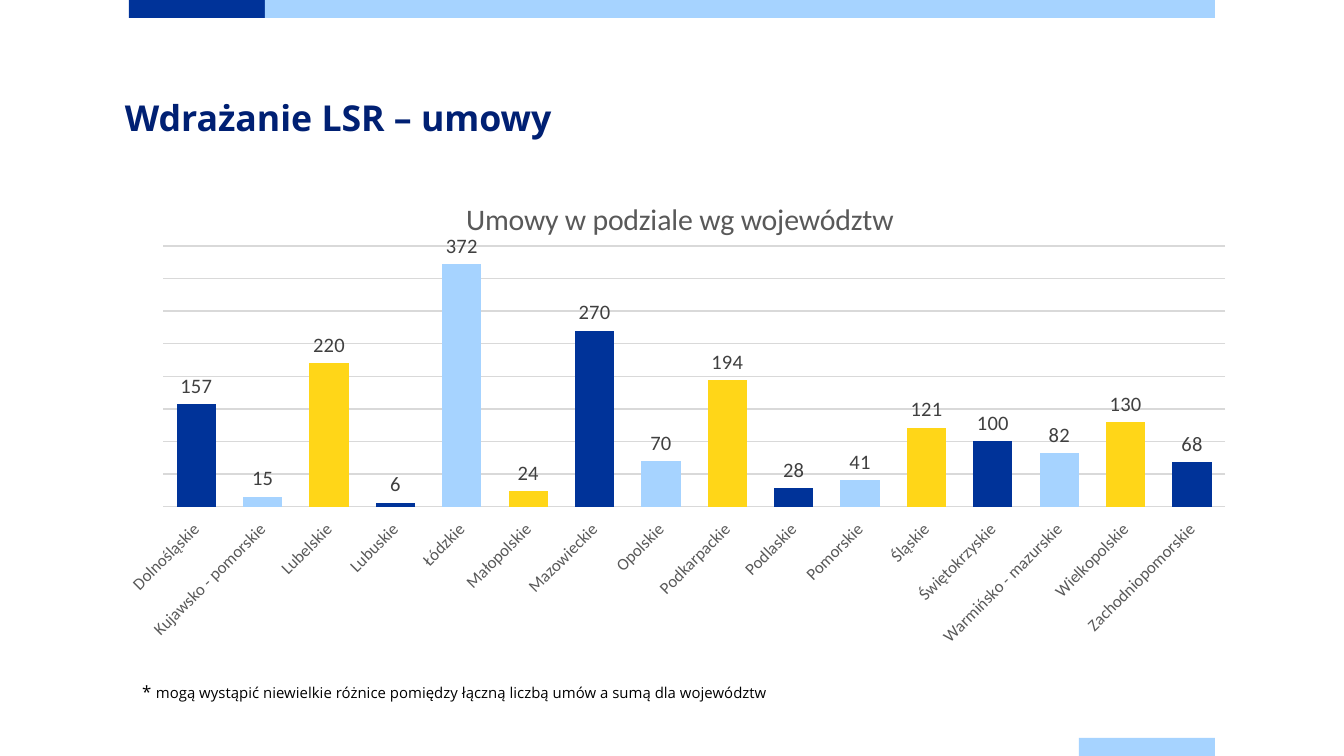
from dataclasses import dataclass

from lxml import etree
from pptx import Presentation
from pptx.chart.data import CategoryChartData
from pptx.dml.color import RGBColor
from pptx.enum.chart import XL_CHART_TYPE, XL_LABEL_POSITION, XL_TICK_LABEL_POSITION, XL_TICK_MARK
from pptx.enum.shapes import MSO_SHAPE
from pptx.enum.text import MSO_ANCHOR
from pptx.oxml import parse_xml
from pptx.oxml.ns import nsdecls, qn
from pptx.util import Pt

COLUMNS = XL_CHART_TYPE.COLUMN_CLUSTERED
OUTSIDE_END = XL_LABEL_POSITION.OUTSIDE_END
NO_TICK = XL_TICK_MARK.NONE
LABELS_LOW = XL_TICK_LABEL_POSITION.LOW
RECTANGLE = MSO_SHAPE.RECTANGLE
TOP = MSO_ANCHOR.TOP


@dataclass(frozen=True)
class Theme:
    navy: str = "003399"
    sky: str = "A6D3FF"
    yellow: str = "FFD618"
    heading: str = "002073"
    black: str = "000000"
    gray: str = "595959"
    label: str = "404040"
    grid: str = "D9D9D9"
    text_font: str = "Open Sans"
    chart_font: str = "Calibri"
    heading_size: float = 19.1
    chart_title_size: float = 16
    label_size: float = 11
    chart_size: float = 10
    axis_size: float = 9
    star_size: float = 9
    note_size: float = 8


THEME = Theme()
PX = 914400 / 134.4
SLIDE_SIZE = (1344, 756)

BANDS = [
    ((129, 0, 136, 18), THEME.navy),
    ((265, 0, 950, 18), THEME.sky),
    ((1079, 738, 136, 18), THEME.sky),
]
HEADING = "Wdrażanie LSR – umowy"
HEADING_BOX = (125, 93, 1086, 107)
NOTE = [
    ("* ", THEME.star_size),
    ("mogą wystąpić niewielkie różnice pomiędzy łączną liczbą umów a sumą dla województw",
     THEME.note_size),
]
NOTE_BOX = (129, 675, 945, 34)
CHART_TITLE = "Umowy w podziale wg województw"
CHART_BOX = (112, 177, 1136, 480)
PLOT_AREA = {"x": 0.045, "y": 0.144, "w": 0.935, "h": 0.543}
CONTRACTS = {
    "Dolnośląskie": 157,
    "Kujawsko - pomorskie": 15,
    "Lubelskie": 220,
    "Lubuskie": 6,
    "Łódzkie": 372,
    "Małopolskie": 24,
    "Mazowieckie": 270,
    "Opolskie": 70,
    "Podkarpackie": 194,
    "Podlaskie": 28,
    "Pomorskie": 41,
    "Śląskie": 121,
    "Świętokrzyskie": 100,
    "Warmińsko - mazurskie": 82,
    "Wielkopolskie": 130,
    "Zachodniopomorskie": 68,
}
COLUMN_COLORS = (THEME.navy, THEME.sky, THEME.yellow)


def px(*lengths):
    return [round(length * PX) for length in lengths]


def style_font(font, name, size, color, bold=False):
    font.name = name
    font.size = Pt(size)
    font.bold = bold
    font.color.rgb = RGBColor.from_string(color)


def fill_solid(fill, color):
    fill.solid()
    fill.fore_color.rgb = RGBColor.from_string(color)


def style_line(line, color):
    line.color.rgb = RGBColor.from_string(color)
    line.width = Pt(0.75)


def add_band(slide, box, color):
    band = slide.shapes.add_shape(RECTANGLE, *px(*box))
    band.shadow.inherit = False
    fill_solid(band.fill, color)
    band.line.fill.background()


def add_text(slide, box):
    text_frame = slide.shapes.add_textbox(*px(*box)).text_frame
    text_frame.word_wrap = True
    text_frame.vertical_anchor = TOP
    return text_frame


def add_heading(slide):
    text_frame = add_text(slide, HEADING_BOX)
    text_frame.margin_left = text_frame.margin_right = 0
    text_frame.margin_top = text_frame.margin_bottom = 0
    text_frame.text = HEADING
    paragraph = text_frame.paragraphs[0]
    paragraph.line_spacing = Pt(24.5)
    style_font(paragraph.runs[0].font, THEME.text_font, THEME.heading_size, THEME.heading, True)


def add_note(slide):
    paragraph = add_text(slide, NOTE_BOX).paragraphs[0]
    for text, size in NOTE:
        run = paragraph.add_run()
        run.text = text
        style_font(run.font, THEME.text_font, size, THEME.black)


def place_plot(chart):
    """Fix the inner plot area as fractions of the chart frame."""
    plot_area = chart.plots[0]._element.getparent()
    for old_layout in plot_area.findall(qn("c:layout")):
        plot_area.remove(old_layout)
    layout = parse_xml(f"<c:layout {nsdecls('c')}><c:manualLayout/></c:layout>")
    settings = {"layoutTarget": "inner", "xMode": "edge", "yMode": "edge", **PLOT_AREA}
    for tag, value in settings.items():
        etree.SubElement(layout[0], qn(f"c:{tag}")).set("val", str(value))
    plot_area.insert(0, layout)


def style_axes(chart):
    category_axis = chart.category_axis
    category_axis.major_tick_mark = category_axis.minor_tick_mark = NO_TICK
    category_axis.tick_label_position = LABELS_LOW
    style_line(category_axis.format.line, THEME.grid)
    style_font(category_axis.tick_labels.font, THEME.chart_font, THEME.axis_size, THEME.gray)
    body = category_axis._element.find(qn("c:txPr")).find(qn("a:bodyPr"))
    body.set("rot", "-2700000")
    body.set("vert", "horz")

    value_axis = chart.value_axis
    value_axis.visible = False
    value_axis.minimum_scale, value_axis.maximum_scale = 0, 400
    value_axis.major_unit = 50
    value_axis.has_major_gridlines = True
    style_line(value_axis.major_gridlines.format.line, THEME.grid)


def add_contracts_chart(slide):
    data = CategoryChartData()
    data.categories = list(CONTRACTS)
    data.add_series("Series 1", list(CONTRACTS.values()))
    chart = slide.shapes.add_chart(COLUMNS, *px(*CHART_BOX), data).chart
    style_font(chart.font, THEME.chart_font, THEME.chart_size, THEME.black)
    chart.has_legend = False
    chart.has_title = True
    chart.chart_title.include_in_layout = False
    title = chart.chart_title.text_frame
    title.text = CHART_TITLE
    style_font(title.paragraphs[0].runs[0].font, THEME.chart_font,
               THEME.chart_title_size, THEME.gray)
    style_axes(chart)
    place_plot(chart)

    plot = chart.plots[0]
    plot.vary_by_categories = False
    plot.gap_width, plot.overlap = 69, -27
    series = plot.series[0]
    fill_solid(series.format.fill, THEME.navy)
    for index in range(len(CONTRACTS)):
        color = COLUMN_COLORS[index % len(COLUMN_COLORS)]
        fill_solid(series.points[index].format.fill, color)
    labels = series.data_labels
    labels.show_value = True
    labels.position = OUTSIDE_END
    style_font(labels.font, THEME.chart_font, THEME.label_size, THEME.label)


def main():
    presentation = Presentation()
    presentation.slide_width, presentation.slide_height = px(*SLIDE_SIZE)
    slide = presentation.slides.add_slide(presentation.slide_layouts[6])
    for box, color in BANDS:
        add_band(slide, box, color)
    add_heading(slide)
    add_note(slide)
    add_contracts_chart(slide)
    presentation.save("out.pptx")


if __name__ == "__main__":
    main()
